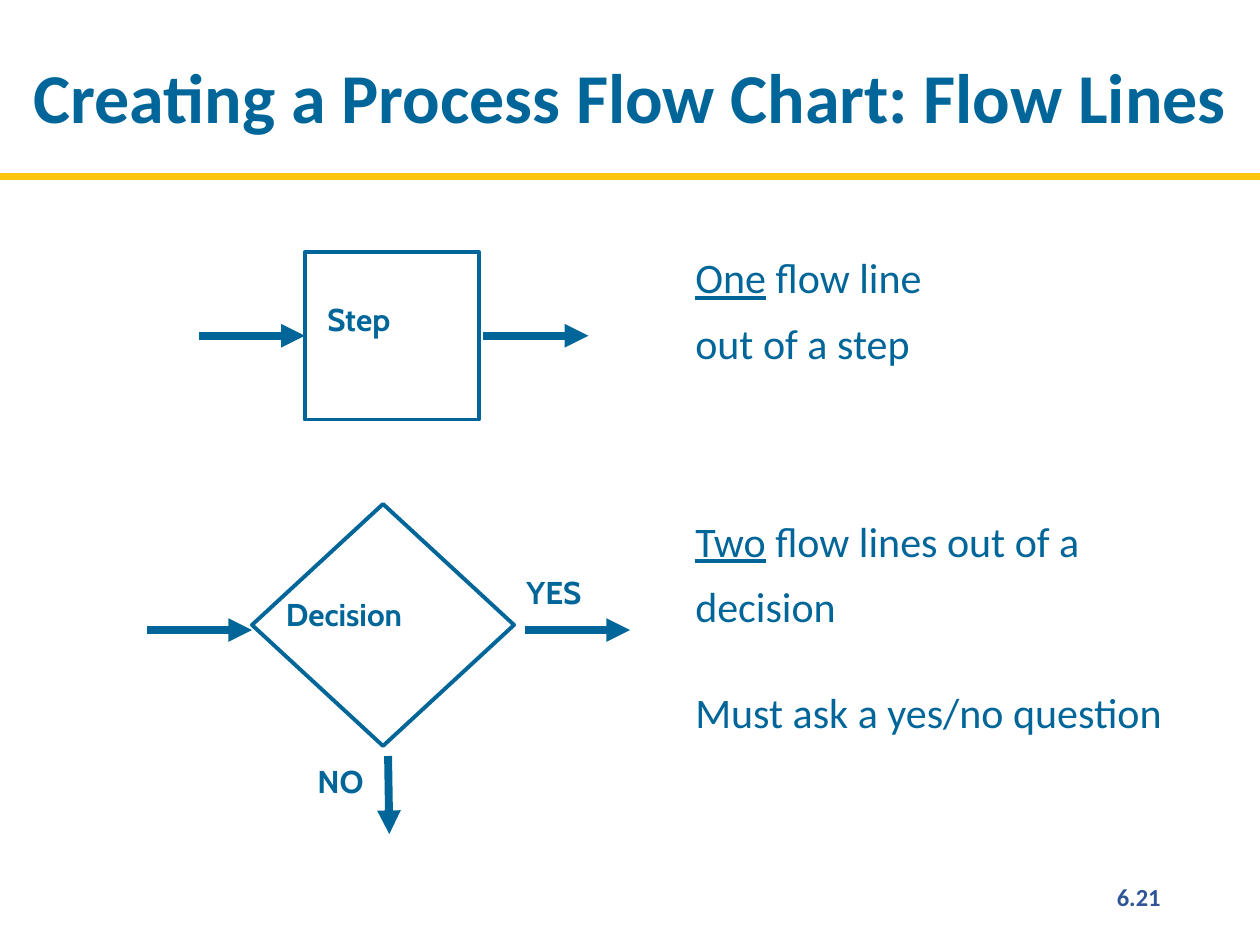
import pptx
import pptx.util
import pptx.dml.color
import pptx.enum.shapes
import pptx.enum.text
import pptx.oxml
import pptx.oxml.ns

Inches = pptx.util.Inches
Pt = pptx.util.Pt
SHAPES = pptx.enum.shapes.MSO_SHAPE
ALIGN = pptx.enum.text.PP_ALIGN
ANCHOR = pptx.enum.text.MSO_ANCHOR

BLUE = pptx.dml.color.RGBColor(0x00, 0x66, 0x99)
GOLD = pptx.dml.color.RGBColor(0xFF, 0xC6, 0x0B)
NAVY = pptx.dml.color.RGBColor(0x2F, 0x55, 0x97)


def add_line(slide, start, end, color, width, arrow=False):
    connector = slide.shapes.add_connector(
        pptx.enum.shapes.MSO_CONNECTOR.STRAIGHT,
        *(Inches(value) for value in (*start, *end)))
    connector.line.color.rgb = color
    connector.line.width = Pt(width)
    if arrow:
        head = pptx.oxml.parse_xml(
            f'<a:tailEnd {pptx.oxml.ns.nsdecls("a")} type="triangle"/>')
        connector.line._get_or_add_ln().append(head)
    effects = pptx.oxml.parse_xml(f'<a:effectLst {pptx.oxml.ns.nsdecls("a")}/>')
    connector._element.spPr.append(effects)


def add_arrow(slide, start, end):
    add_line(slide, start, end, BLUE, 4.5, arrow=True)


def add_outline(slide, kind, box):
    shape = slide.shapes.add_shape(kind, *(Inches(value) for value in box))
    shape.shadow.inherit = False
    shape.fill.background()
    shape.line.color.rgb = BLUE
    shape.line.width = Pt(2.25)


def add_text(slide, box, paragraphs, size, font="Calibri", color=BLUE, bold=False,
             align=ALIGN.LEFT, line_spacing=None, space_before=0, wrap=True):
    """Each paragraph is a list of (text, underlined) runs."""
    text_box = slide.shapes.add_textbox(*(Inches(value) for value in box))
    frame = text_box.text_frame
    frame.word_wrap = wrap
    for index, runs in enumerate(paragraphs):
        paragraph = frame.add_paragraph() if index else frame.paragraphs[0]
        paragraph.alignment = align
        if line_spacing:
            paragraph.line_spacing = line_spacing
        if index:
            paragraph.space_before = Pt(space_before)
        for text, underlined in runs:
            run = paragraph.add_run()
            run.text = text
            run.font.name = font
            run.font.size = Pt(size)
            run.font.bold = bold
            run.font.underline = underlined
            run.font.color.rgb = color
    return frame


def add_label(slide, box, text, wrap=True):
    add_text(slide, box, [[(text, False)]], 18, font="Cabin", bold=True, wrap=wrap)


def add_explanation(slide, box, paragraphs):
    add_text(slide, box, paragraphs, 24, line_spacing=1.3, space_before=22.8)


def add_header(slide, left, top, width, height):
    rule_y = top + height - 0.05
    add_line(slide, (left, rule_y), (left + width, rule_y), GOLD, 4)
    frame = add_text(slide, (left, top, width, height),
                     [[("Creating a Process Flow Chart: Flow Lines", False)]],
                     40, bold=True, align=ALIGN.CENTER, line_spacing=0.9)
    frame.vertical_anchor = ANCHOR.MIDDLE
    frame.margin_left = frame.margin_right = frame.margin_top = Inches(0.2)
    frame.margin_bottom = Inches(0.05)


def add_step(slide, left, top, width, height):
    flow_y = top + height / 2
    right = left + width
    add_outline(slide, SHAPES.FLOWCHART_PROCESS, (left, top, width, height))
    add_arrow(slide, (left - 0.84, flow_y), (left, flow_y))
    add_arrow(slide, (right + 0.03, flow_y), (right + 0.87, flow_y))
    add_label(slide, (left + 0.08, top + 0.33, 1.17, 0.57), "Step")
    add_explanation(slide, (5.42, top - 0.17, 2.17, 1.39),
                    [[("One", True), (" flow line out of a step", False)]])


def add_decision(slide, left, top, width, height):
    flow_y = top + 1
    right, bottom = left + width, top + height
    exit_x = left + width / 2 + 0.04
    add_outline(slide, SHAPES.FLOWCHART_DECISION, (left, top, width, height))
    add_arrow(slide, (left - 0.83, flow_y), (left, flow_y))
    add_arrow(slide, (right + 0.09, flow_y), (right + 0.92, flow_y))
    add_arrow(slide, (exit_x, bottom + 0.08), (exit_x + 0.01, bottom + 0.7))
    add_label(slide, (left + 0.17, top + 0.67, 1.92, 0.57), "Decision")
    add_label(slide, (right, top + 0.5, 0.68, 0.4), "YES", wrap=False)
    add_label(slide, (left + 0.42, bottom + 0.08, 0.61, 0.4), "NO")
    add_explanation(slide, (5.42, top - 0.08, 4.17, 1.9),
                    [[("Two", True), (" flow lines out of a decision", False)],
                     [("Must ask a yes/no question", False)]])


def add_page_number(slide, *box):
    add_text(slide, box, [[("6.21", False)]], 14, color=NAVY, bold=True,
             align=ALIGN.RIGHT)


def main():
    presentation = pptx.Presentation()
    presentation.slide_width = Inches(10)
    presentation.slide_height = Inches(7.5)
    slide = presentation.slides.add_slide(presentation.slide_layouts[6])
    add_step(slide, 2.42, 2, 1.38, 1.33)
    add_decision(slide, 2, 4, 2.08, 1.92)
    add_header(slide, 0, 0, 10, 1.45)
    add_page_number(slide, 7.06, 6.95, 2.25, 0.4)
    presentation.save("out.pptx")


if __name__ == "__main__":
    main()
